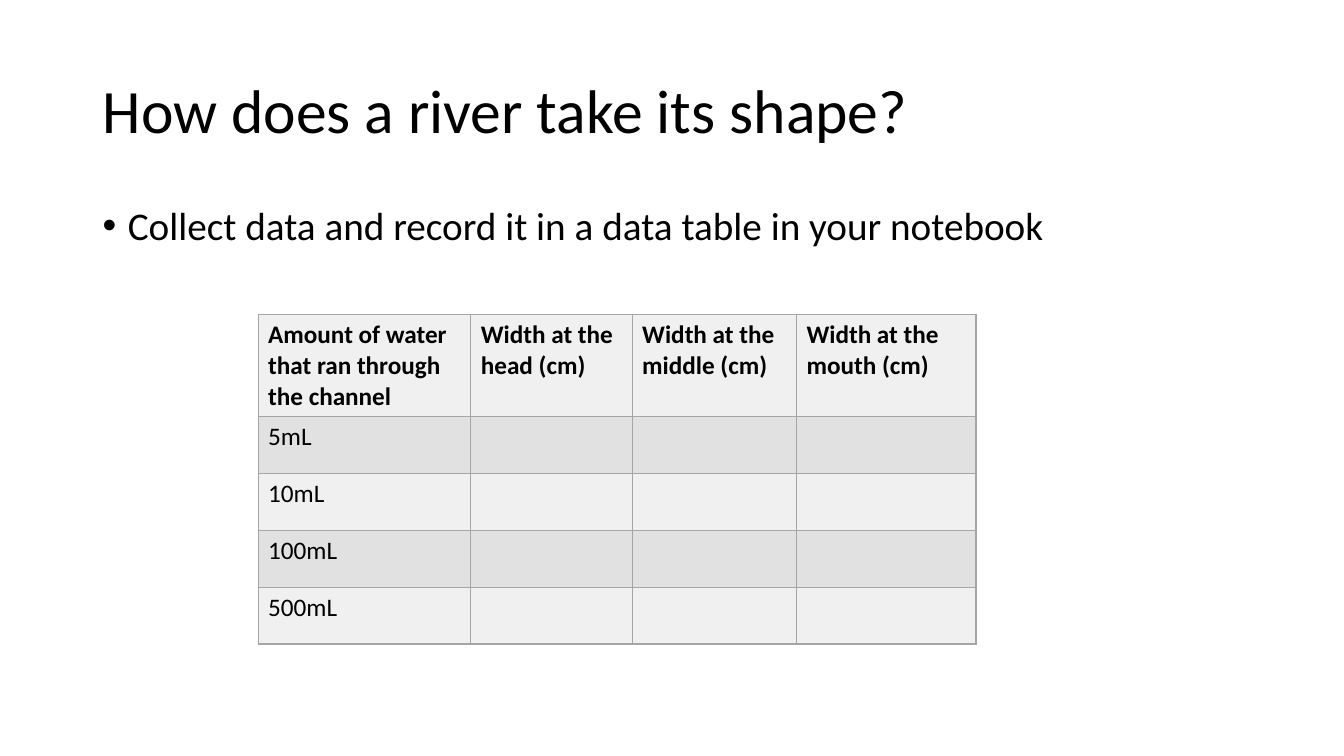
from lxml import etree
from pptx import Presentation
from pptx import util as u
from pptx.dml.color import RGBColor
from pptx.enum import text
from pptx.oxml.ns import qn

TITLE = "How does a river take its shape?"
TASK = "Collect data and record it in a data table in your notebook"
HEADS = ["Amount of water that ran through the channel", "Width at the head (cm)",
         "Width at the middle (cm)", "Width at the mouth (cm)"]
AMOUNTS = ["5mL", "10mL", "100mL", "500mL"]
WIDTHS = [2.11, 1.6, 1.63, 1.78]
HEAD_H, ROW_H = 1.01, 0.565
COLORS = {"ink": "000000", "light": "F0F0F0", "dark": "E1E1E1", "rule": "A5A5A5"}


def style(para, size, bold=False):
    for run in para.runs:
        font = run.font
        font.name, font.size, font.bold = "Calibri", u.Pt(size), bold
        font.color.rgb = RGBColor.from_string(COLORS["ink"])


def add_text(slide, words, top, height, size, anchor):
    box = slide.shapes.add_textbox(u.Inches(0.92), u.Inches(top),
                                   u.Inches(11.5), u.Inches(height))
    frame = box.text_frame
    frame.word_wrap = True
    frame.vertical_anchor = anchor
    frame.text = words
    para = frame.paragraphs[0]
    para.line_spacing = 0.9
    style(para, size)
    return para


def add_bullet(para):
    props = para._p.get_or_add_pPr()
    indent = u.Inches(0.25)
    props.set("marL", str(indent))
    props.set("indent", str(-indent))
    etree.SubElement(props, qn("a:buFont")).set("typeface", "Arial")
    etree.SubElement(props, qn("a:buChar")).set("char", "•")


def add_border(cell):
    """Rule all four sides; the lines must precede the cell's fill."""
    props = cell._tc.get_or_add_tcPr()
    for side in ("lnL", "lnR", "lnT", "lnB"):
        line = etree.SubElement(props, qn("a:" + side), w=str(u.Pt(1)))
        fill = etree.SubElement(line, qn("a:solidFill"))
        etree.SubElement(fill, qn("a:srgbClr"), val=COLORS["rule"])


def add_data(slide):
    rows = [HEADS] + [[amount, "", "", ""] for amount in AMOUNTS]
    height = HEAD_H + ROW_H * len(AMOUNTS)
    table = slide.shapes.add_table(len(rows), len(HEADS), u.Inches(2.56), u.Inches(3.12),
                                   u.Inches(sum(WIDTHS)), u.Inches(height)).table
    for col, width in zip(table.columns, WIDTHS):
        col.width = u.Inches(width)
    for r, row in enumerate(rows):
        table.rows[r].height = u.Inches(ROW_H if r else HEAD_H)
        for c, words in enumerate(row):
            cell = table.cell(r, c)
            add_border(cell)
            cell.fill.solid()
            shade = COLORS["dark" if r % 2 else "light"]
            cell.fill.fore_color.rgb = RGBColor.from_string(shade)
            cell.text = words
            style(cell.text_frame.paragraphs[0], 18, bold=r == 0)


def main():
    deck = Presentation()
    deck.slide_width, deck.slide_height = u.Inches(13.33), u.Inches(7.5)
    slide = deck.slides.add_slide(deck.slide_layouts[6])
    add_text(slide, TITLE, 0.4, 1.45, 44, text.MSO_ANCHOR.MIDDLE)
    add_bullet(add_text(slide, TASK, 2, 4.76, 28, text.MSO_ANCHOR.TOP))
    add_data(slide)
    deck.save("out.pptx")


if __name__ == "__main__":
    main()
